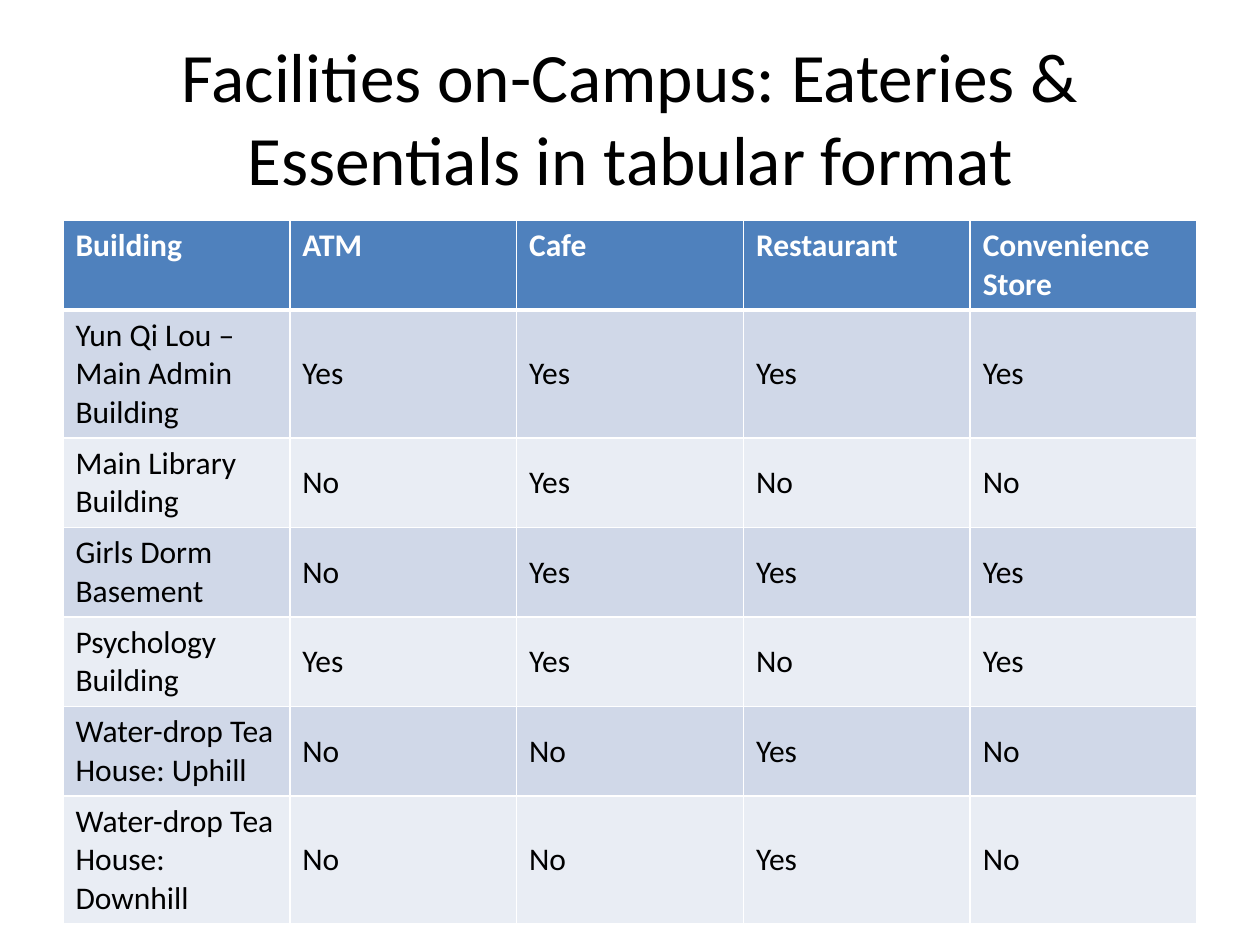
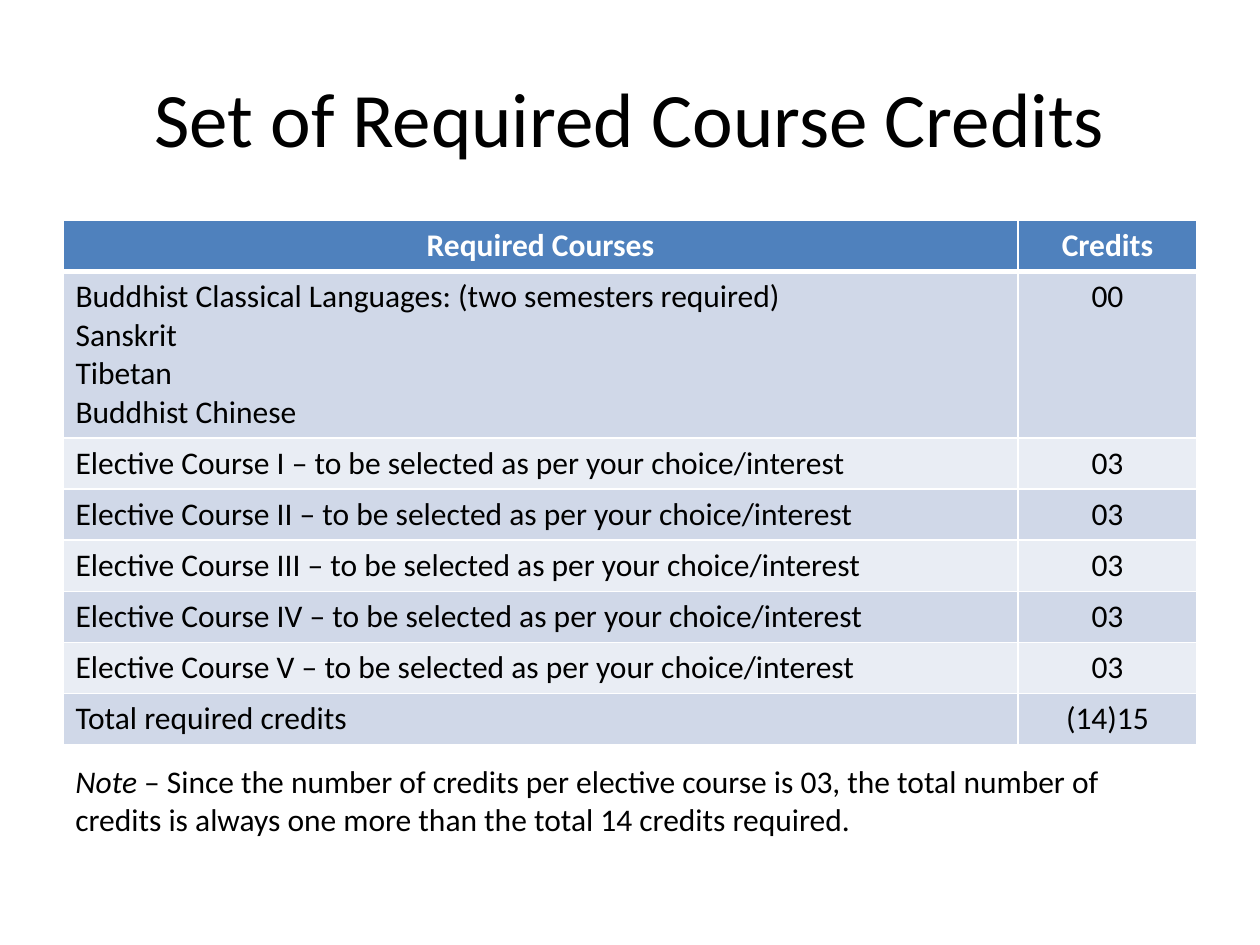
"""Build two slides: a campus facilities table and a required credits table."""
from lxml.etree import SubElement
from pptx import Presentation
from pptx.dml.color import RGBColor
from pptx.enum.text import MSO_ANCHOR, MSO_AUTO_SIZE, PP_ALIGN
from pptx.oxml.ns import qn
from pptx.util import Pt

PX = 9144
COLORS = {
    "text": "000000",
    "white": "FFFFFF",
    "header": "4F81BD",
    "band": "D0D8E8",
    "band_light": "E9EDF4",
}
FONT = "Calibri"
LEFT, WIDTH = 50, 900
TITLE_TOP, TITLE_HEIGHT = 30, 125
TABLE_TOP, ROW_HEIGHT = 175, 40
NOTE_TOP, NOTE_HEIGHT = 600, 71


def write_text(frame, text, size=18, color="text", bold=False, align=PP_ALIGN.LEFT,
               anchor=MSO_ANCHOR.TOP, italic_lead=""):
    """Write one paragraph per line, with an optional italic opening."""
    frame.word_wrap = True
    frame.vertical_anchor = anchor
    for index, line in enumerate(text.split("\n")):
        paragraph = frame.add_paragraph() if index else frame.paragraphs[0]
        paragraph.alignment = align
        lead = italic_lead if index == 0 else ""
        for part, italic in ((lead, True), (line, False)):
            if part:
                run = paragraph.add_run()
                run.text = part
                run.font.name = FONT
                run.font.size = Pt(size)
                run.font.bold = bold
                run.font.italic = italic
                run.font.color.rgb = RGBColor.from_string(COLORS[color])


def set_borders(cell, top, bottom):
    """Give a cell white borders, with top and bottom widths in points."""
    properties = cell._tc.get_or_add_tcPr()
    for side, points in (("L", 1), ("R", 1), ("T", top), ("B", bottom)):
        line = SubElement(properties, qn(f"a:ln{side}"), w=str(Pt(points)))
        fill = SubElement(line, qn("a:solidFill"))
        SubElement(fill, qn("a:srgbClr"), val=COLORS["white"])


facilities = [
    ("Building", "ATM", "Cafe", "Restaurant", "Convenience\nStore"),
    ("Yun Qi Lou – Main Admin Building", "Yes", "Yes", "Yes", "Yes"),
    ("Main Library Building", "No", "Yes", "No", "No"),
    ("Girls Dorm Basement", "No", "Yes", "Yes", "Yes"),
    ("Psychology Building", "Yes", "Yes", "No", "Yes"),
    ("Water-drop Tea House: Uphill", "No", "No", "Yes", "No"),
    ("Water-drop Tea House: Downhill", "No", "No", "Yes", "No"),
]
languages = ("Buddhist Classical Languages: (two semesters required)\n"
             "Sanskrit\nTibetan\nBuddhist Chinese")
electives = [(f"Elective Course {numeral} – to be selected as per your choice/interest", "03")
             for numeral in ("I", "II", "III", "IV", "V")]
credits = [("Required Courses", "Credits"), (languages, "00"), *electives,
           ("Total required credits", "(14)15")]

slides = [
    {"title": "Facilities on-Campus: Eateries & Essentials in tabular format",
     "title_size": 39.6, "rows": facilities, "columns": [WIDTH // 5] * 5,
     "header_align": PP_ALIGN.LEFT, "value_align": PP_ALIGN.LEFT,
     "value_anchor": MSO_ANCHOR.MIDDLE},
    {"title": "Set of Required Course Credits",
     "title_size": 44, "rows": credits, "columns": [758, 142],
     "header_align": PP_ALIGN.CENTER, "value_align": PP_ALIGN.CENTER,
     "value_anchor": MSO_ANCHOR.TOP},
]

presentation = Presentation()
presentation.slide_width = 1000 * PX
presentation.slide_height = 750 * PX

for content in slides:
    slide = presentation.slides.add_slide(presentation.slide_layouts[5])
    title = slide.shapes.title
    title.left, title.top = LEFT * PX, TITLE_TOP * PX
    title.width, title.height = WIDTH * PX, TITLE_HEIGHT * PX
    title.text_frame.auto_size = MSO_AUTO_SIZE.NONE
    write_text(title.text_frame, content["title"], size=content["title_size"],
               align=PP_ALIGN.CENTER, anchor=MSO_ANCHOR.MIDDLE)

    rows, columns = content["rows"], content["columns"]
    table = slide.shapes.add_table(
        len(rows), len(columns), LEFT * PX, TABLE_TOP * PX,
        WIDTH * PX, len(rows) * ROW_HEIGHT * PX).table
    for column, width in zip(table.columns, columns):
        column.width = width * PX

    for row_index, row in enumerate(rows):
        is_header = row_index == 0
        fill = "header" if is_header else "band" if row_index % 2 else "band_light"
        for column_index, text in enumerate(row):
            cell = table.cell(row_index, column_index)
            is_value = column_index > 0 and not is_header
            align = content["value_align"] if is_value else PP_ALIGN.LEFT
            set_borders(cell, top=3 if row_index == 1 else 1, bottom=3 if is_header else 1)
            cell.fill.solid()
            cell.fill.fore_color.rgb = RGBColor.from_string(COLORS[fill])
            write_text(cell.text_frame, text, bold=is_header,
                       color="white" if is_header else "text",
                       align=content["header_align"] if is_header else align)
            cell.vertical_anchor = content["value_anchor"] if is_value else MSO_ANCHOR.TOP

note = slide.shapes.add_textbox(LEFT * PX, NOTE_TOP * PX, WIDTH * PX, NOTE_HEIGHT * PX)
note.text_frame.auto_size = MSO_AUTO_SIZE.SHAPE_TO_FIT_TEXT
write_text(note.text_frame,
           " – Since the number of credits per elective course is 03, the total number of "
           "credits is always one more than the total 14 credits required.",
           italic_lead="Note")

presentation.save("out.pptx")
